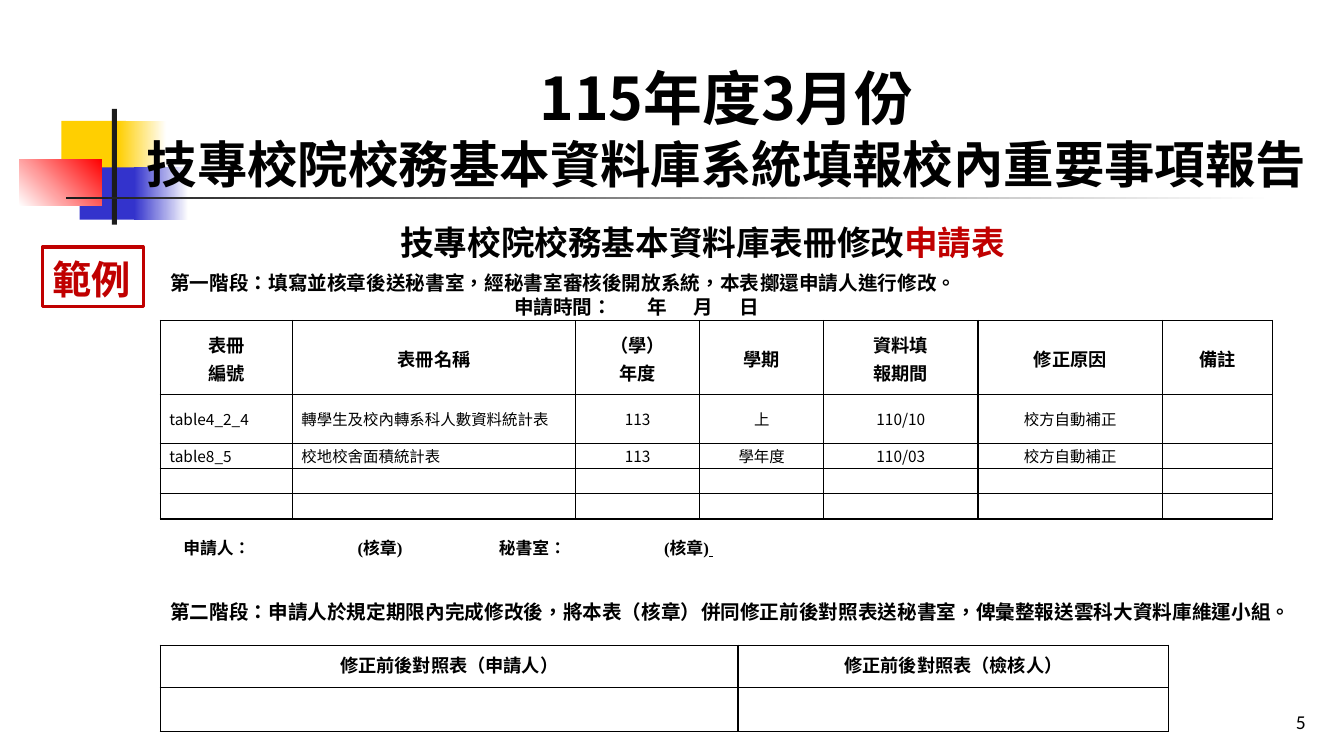
from dataclasses import dataclass
from typing import Optional

from lxml.etree import SubElement
from pptx import Presentation
from pptx.dml.color import RGBColor as RGB
from pptx.enum.shapes import MSO_SHAPE as Shape
from pptx.enum.text import MSO_ANCHOR as Anchor, MSO_AUTO_SIZE as AutoSize, PP_ALIGN as Align
from pptx.oxml.ns import qn
from pptx.util import Emu, Pt


@dataclass(frozen=True)
class Theme:
    black: str = "000000"
    white: str = "FFFFFF"
    dark: str = "1C1C1C"
    yellow: str = "FFCF01"
    blue: str = "3333CC"
    bright: str = "FF0000"
    red: str = "C00000"
    sans: str = "Noto Sans CJK SC"
    serif: str = "Times New Roman"
    plain: str = "Calibri"
    title: int = 42
    subtitle: int = 36
    badge: int = 28
    form: int = 24
    body: int = 14
    head: int = 13
    sign: int = 12
    cell: int = 11


T = Theme()


@dataclass(frozen=True)
class Box:
    x: int
    y: int
    w: int
    h: int

    def emu(self) -> tuple[Emu, ...]:
        return tuple(px(v) for v in (self.x, self.y, self.w, self.h))


@dataclass(frozen=True)
class Block:
    box: Box
    start: str
    end: Optional[str] = None
    angle: int = 0


@dataclass(frozen=True)
class Run:
    text: str
    font: str = T.sans
    size: int = T.body
    color: str = T.black
    bold: bool = True
    underline: bool = False


@dataclass(frozen=True)
class Para:
    runs: tuple[Run, ...]
    line: Optional[int] = None
    align: Align = Align.LEFT
    before: int = 0
    tabs: tuple[int, ...] = ()


@dataclass(frozen=True)
class Grid:
    box: Box
    cols: tuple[int, ...]
    rows: tuple[int, ...]
    cells: tuple[tuple[str, ...], ...]
    margins: tuple[int, int]
    anchor: Anchor
    left_cols: int = 0


def px(n: int) -> Emu:
    return Emu(n * 9144)


def add_run(p, text: str, *, font: str, size: int, color: str, bold: bool, underline: bool) -> None:
    r = p.add_run()
    r.text = text
    f = r.font
    f.size, f.name, f.bold, f.underline = Pt(size), font, bold, underline
    f.color.rgb = RGB.from_string(color)
    rpr = r._r.get_or_add_rPr()
    rpr.set("lang", "zh-TW")
    SubElement(rpr, qn("a:ea"), typeface=T.sans)


def write(tf, paras: tuple[Para, ...]) -> None:
    for i, para in enumerate(paras):
        p = tf.add_paragraph() if i else tf.paragraphs[0]
        if para.tabs:
            tabs = SubElement(p._p.get_or_add_pPr(), qn("a:tabLst"))
            for pos in para.tabs:
                SubElement(tabs, qn("a:tab"), pos=str(px(pos)), algn="l")
        p.alignment = para.align
        if para.line:
            p.line_spacing = Pt(para.line)
        if para.before:
            p.space_before = Pt(para.before)
        for j, run in enumerate(para.runs):
            if j and para.runs[j - 1].size != run.size:
                p.add_line_break()
            add_run(p, run.text, font=run.font, size=run.size, color=run.color,
                    bold=run.bold, underline=run.underline)


def add_block(s, block: Block) -> None:
    sp = s.shapes.add_shape(Shape.RECTANGLE, *block.box.emu())
    sp.shadow.inherit = False
    sp.line.fill.background()
    if block.end is None:
        sp.fill.solid()
        sp.fill.fore_color.rgb = RGB.from_string(block.start)
        return
    sp.fill.gradient()
    sp.fill.gradient_angle = block.angle
    for stop, color, pos in zip(sp.fill.gradient_stops, (block.start, block.end), (0, 1)):
        stop.color.rgb = RGB.from_string(color)
        stop.position = pos


def add_text(s, box: Box, *paras: Para, anchor: Anchor = Anchor.TOP):
    sp = s.shapes.add_textbox(*box.emu())
    tf = sp.text_frame
    tf.word_wrap = True
    tf.vertical_anchor = anchor
    write(tf, paras)
    return sp


def style_cell(cell, grid: Grid) -> None:
    side, edge = grid.margins
    cell.margin_left = cell.margin_right = px(side)
    cell.margin_top = cell.margin_bottom = px(edge)
    cell.vertical_anchor = grid.anchor
    tc_pr = cell._tc.get_or_add_tcPr()
    for name in ("lnL", "lnR", "lnT", "lnB"):
        ln = SubElement(tc_pr, qn(f"a:{name}"), w=str(Pt(1)))
        SubElement(SubElement(ln, qn("a:solidFill")), qn("a:srgbClr"), val=T.black)
    cell.fill.background()


def add_grid(s, grid: Grid) -> None:
    table = s.shapes.add_table(len(grid.rows), len(grid.cols), *grid.box.emu()).table
    table.first_row = table.horz_banding = False
    for col, w in zip(table.columns, grid.cols):
        col.width = px(w)
    for row, h in zip(table.rows, grid.rows):
        row.height = px(h)
    for i in range(len(grid.rows)):
        for j in range(len(grid.cols)):
            cell = table.cell(i, j)
            style_cell(cell, grid)
            text = grid.cells[i][j] if i < len(grid.cells) and j < len(grid.cells[i]) else ""
            if not text:
                SubElement(cell.text_frame.paragraphs[0]._p, qn("a:endParaRPr"), sz=str(T.cell * 100))
                continue
            font = T.sans if text.isascii() else T.serif
            align = Align.LEFT if i and j < grid.left_cols else Align.CENTER
            size = T.cell if i else T.head
            write(cell.text_frame, tuple(
                Para((Run(part, font, size, bold=not i),), None if i else 20, align)
                for part in text.split("|")))


BLOCKS = (
    Block(Box(61, 120, 64, 52), T.yellow),
    Block(Box(117, 120, 48, 52), T.yellow, T.white),
    Block(Box(79, 166, 61, 52), T.blue),
    Block(Box(133, 166, 54, 52), T.blue, T.white),
    Block(Box(19, 158, 82, 46), T.white, T.bright, 45),
    Block(Box(111, 108, 5, 115), T.dark),
    Block(Box(65, 195, 1199, 3), T.dark, T.white),
)
REQUEST = Grid(
    Box(159, 318, 1102, 197), (131, 281, 123, 123, 153, 183, 109), (73, 49, 25, 25, 25),
    (("表冊|編號", "表冊名稱", "（學）|年度", "學期", "資料填|報期間", "修正原因", "備註"),
     ("table4_2_4", "轉學生及校內轉系科人數資料統計表", "113", "上", "110/10", "校方自動補正"),
     ("table8_5", "校地校舍面積統計表", "113", "學年度", "110/03", "校方自動補正")),
    (9, 0), Anchor.MIDDLE, 2)
COMPARE = Grid(
    Box(159, 640, 1000, 86), (573, 427), (42, 44),
    (("修正前後對照表（申請人）", "修正前後對照表（檢核人）"),), (10, 5), Anchor.TOP)


def sign(text: str, underline: bool = False) -> Run:
    return Run(text, T.serif, T.sign, underline=underline)


def blank() -> Run:
    return Run("\t", T.serif, underline=True)


def main() -> None:
    prs = Presentation()
    prs.slide_width, prs.slide_height = px(1333), px(750)
    s = prs.slides.add_slide(prs.slide_layouts[5])
    for block in BLOCKS:
        add_block(s, block)

    add_text(s, Box(1027, 683, 278, 50),
             Para((Run("5", T.plain, bold=False),), align=Align.RIGHT), anchor=Anchor.BOTTOM)
    add_text(s, Box(172, 526, 1122, 50), Para(
        (sign("申請人："), sign("\t", True), sign(" (核章)"), sign("\t"), sign("秘書室："),
         sign(" "), sign("\t", True), sign(" (核章)"), sign(" ", True)),
        16, tabs=(169, 313, 473)))
    add_text(s, Box(159, 590, 1158, 34), Para(
        (Run("第二階段：申請人於規定期限內完成修改後，將本表（核章）"),
         Run("併同修正前後對照表送秘書室，俾彙整報送雲科大資料庫維運小組。", T.serif)), 17))
    add_grid(s, REQUEST)
    add_text(
        s, Box(159, 214, 1076, 121),
        Para((Run("技專校院校務基本資料庫表冊修改", size=T.form),
              Run("申請表", size=T.form, color=T.red)), 30, Align.CENTER),
        Para((Run("第一階段：填寫並核章後送秘書室，經秘書室審核後開放系統，本表"),
              Run("擲還申請人進行修改。", T.serif)), 17, before=6),
        Para((Run("\t申請時間："), blank(), Run("年"), blank(), Run("月"), blank(), Run("日")),
             17, tabs=(341, 473, 519, 565)))
    add_grid(s, COMPARE)

    title = s.shapes.title
    title.left, title.top, title.width, title.height = Box(117, 52, 1207, 142).emu()
    tf = title.text_frame
    tf.auto_size, tf.word_wrap, tf.vertical_anchor = AutoSize.NONE, True, Anchor.BOTTOM
    tf.margin_bottom = px(2)
    write(tf, (Para((Run("115年度3月份", size=T.title),
                     Run("技專校院校務基本資料庫系統填報校內重要事項報告", size=T.subtitle)),
                    44, Align.CENTER),))
    s.shapes.element.append(title.element)

    badge = add_text(s, Box(42, 245, 100, 59), Para((Run("範例", T.plain, T.badge, T.red),), 36))
    badge.text_frame.margin_right = px(5)
    badge.line.color.rgb = RGB.from_string(T.red)
    badge.line.width = Pt(2.25)

    prs.save("out.pptx")


if __name__ == "__main__":
    main()
